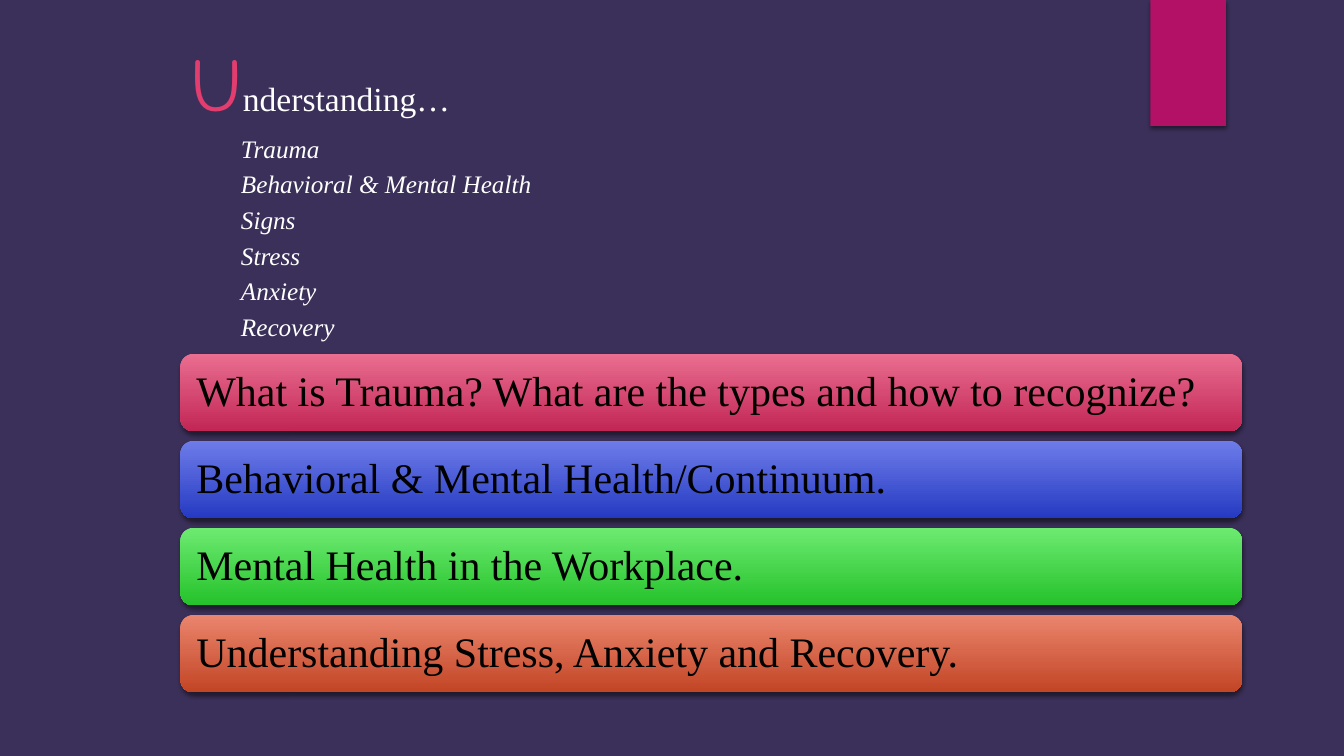
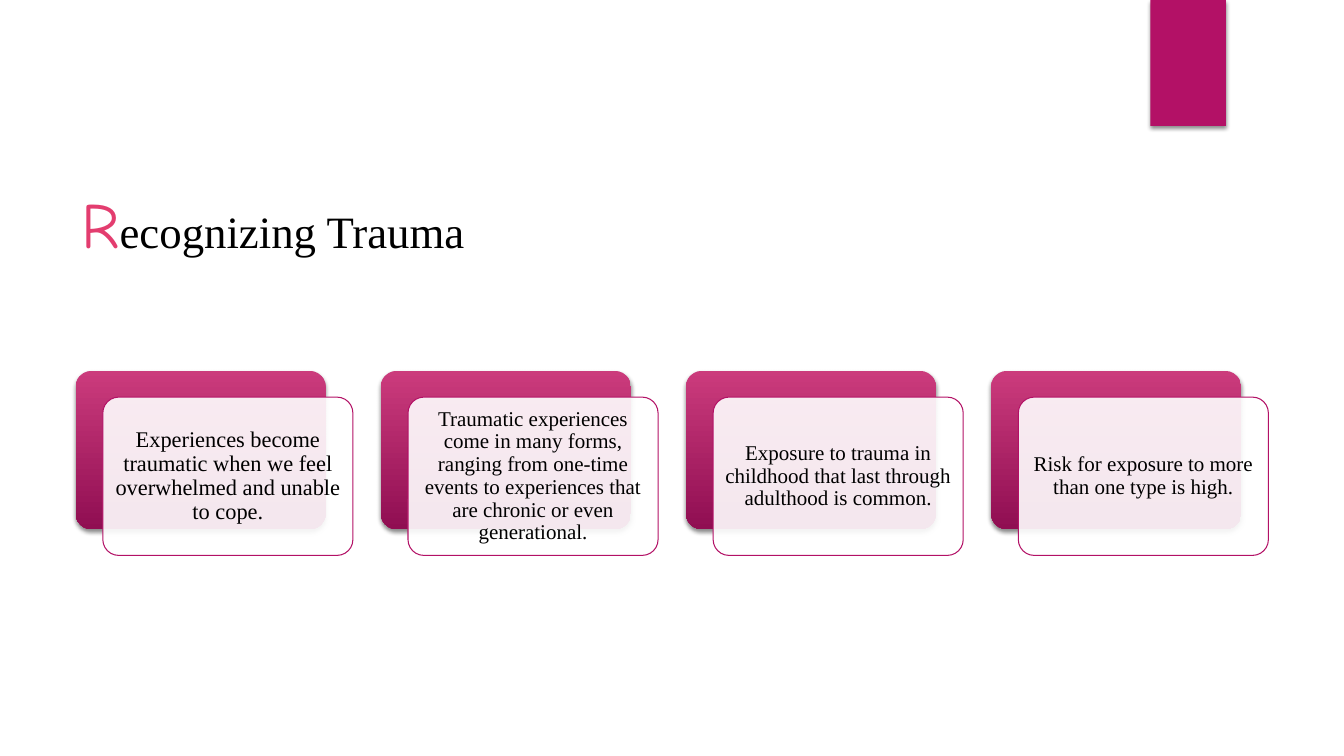
from lxml import etree
from pptx import Presentation
from pptx.dml.color import RGBColor
from pptx.enum.shapes import MSO_SHAPE as SHAPE
from pptx.enum.text import MSO_ANCHOR as ANCHOR, MSO_AUTO_SIZE as AUTOSIZE, PP_ALIGN as ALIGN
from pptx.oxml.ns import qn
from pptx.util import Inches, Pt

# Shared colours and fonts
PURPLE = RGBColor(0x3B, 0x30, 0x59)
MAGENTA = RGBColor(0xB3, 0x11, 0x66)
PINK = RGBColor(0xE3, 0x3D, 0x6F)
WHITE = RGBColor(0xFF, 0xFF, 0xFF)
BLACK = RGBColor(0x00, 0x00, 0x00)
CARD_GRADIENT = (RGBColor(0xCB, 0x3B, 0x7C), RGBColor(0x90, 0x0E, 0x52))
BAR_GRADIENTS = [
    (RGBColor(0xE9, 0x6E, 0x90), RGBColor(0xC2, 0x26, 0x55)),
    (RGBColor(0x6E, 0x7C, 0xE9), RGBColor(0x25, 0x3A, 0xC2)),
    (RGBColor(0x6D, 0xEA, 0x71), RGBColor(0x25, 0xC2, 0x2B)),
    (RGBColor(0xEA, 0x85, 0x6D), RGBColor(0xC2, 0x45, 0x25)),
]
SERIF = "Times New Roman"
INITIAL = "Comic Neue"

# Slide content
TOPICS = ["Trauma", "Behavioral & Mental Health", "Signs", "Stress", "Anxiety", "Recovery"]
BARS = [
    "What is Trauma? What are the types and how to recognize?",
    "Behavioral & Mental Health/Continuum.",
    "Mental Health in the Workplace.",
    "Understanding Stress, Anxiety and Recovery.",
]
CARDS = [
    ("Experiences become traumatic when we feel overwhelmed and unable to cope.", 16),
    ("Traumatic experiences come in many forms, ranging from one-time events to "
     "experiences that are chronic or even generational.", 15),
    ("Exposure to trauma in childhood that last through adulthood is common.", 15),
    ("Risk for exposure to more than one type is high.", 15),
]


def add_run(p, text, size, color, name=SERIF, **extra):
    r = p.add_run()
    r.text = text
    font = {"name": name, "size": Pt(size), "bold": False, **extra}
    for key, value in font.items():
        setattr(r.font, key, value)
    r.font.color.rgb = color


def format_paragraph(p, align, after=0):
    values = {"alignment": align, "line_spacing": 0.9,
              "space_before": Pt(0), "space_after": Pt(after)}
    for key, value in values.items():
        setattr(p, key, value)


def add_box(slide, shape, x, y, w, h):
    sp = slide.shapes.add_shape(shape, Inches(x), Inches(y), Inches(w), Inches(h))
    sp.shadow.inherit = False
    sp.line.fill.background()
    return sp


def add_shadow(sp):
    effects = sp._element.spPr.find(qn("a:effectLst"))
    shadow = etree.SubElement(effects, qn("a:outerShdw"), blurRad=str(Pt(3)),
                              dist=str(Pt(2)), dir="5400000", rotWithShape="0")
    color = etree.SubElement(shadow, qn("a:srgbClr"), val=str(BLACK))
    etree.SubElement(color, qn("a:alpha"), val="45000")


def fill_gradient(sp, colors):
    sp.fill.gradient()
    sp.fill.gradient_angle = 270
    for stop, color in zip(sp.fill.gradient_stops, colors):
        stop.color.rgb = color


def set_text(sp, text, size, align, inset):
    tf = sp.text_frame
    values = {"word_wrap": True, "vertical_anchor": ANCHOR.MIDDLE}
    values.update({f"margin_{side}": Inches(inset) for side in ("left", "top", "right", "bottom")})
    for key, value in values.items():
        setattr(tf, key, value)
    format_paragraph(tf.paragraphs[0], align)
    add_run(tf.paragraphs[0], text, size, BLACK)


def new_slide(prs, background):
    """Title-only slide with its background and the corner ribbon."""
    s = prs.slides.add_slide(prs.slide_layouts[5])
    s.background.fill.solid()
    s.background.fill.fore_color.rgb = background
    ribbon = add_box(s, SHAPE.RECTANGLE, 11.41, 0, 0.75, 1.25)
    ribbon.fill.solid()
    ribbon.fill.fore_color.rgb = MAGENTA
    add_shadow(ribbon)
    return s


def set_title(s, text, box, initial_size, size, color, align):
    """Title whose first letter is a large pink initial."""
    title = s.shapes.title
    title.left, title.top, title.width, title.height = map(Inches, box)
    tf = title.text_frame
    tf.auto_size = AUTOSIZE.NONE
    tf.word_wrap = True
    tf.vertical_anchor = ANCHOR.MIDDLE
    p = tf.paragraphs[0]
    format_paragraph(p, align, 6)
    add_run(p, text[0], initial_size, PINK, INITIAL)
    add_run(p, text[1:], size, color)
    return tf


def add_topics(tf, topics):
    for topic in topics:
        p = tf.add_paragraph()
        p._p.get_or_add_pPr().set("marL", str(Inches(0.5)))
        format_paragraph(p, ALIGN.LEFT, 6)
        add_run(p, topic, 18, WHITE, italic=True)


def add_bars(s, x, y, w, h):
    """Full-width bars spread evenly over the box."""
    bar_h = 0.77
    pitch = (h - bar_h) / (len(BARS) - 1)
    for i, (text, colors) in enumerate(zip(BARS, BAR_GRADIENTS)):
        bar = add_box(s, SHAPE.ROUNDED_RECTANGLE, x, y + i * pitch, w, bar_h)
        fill_gradient(bar, colors)
        add_shadow(bar)
        set_text(bar, text, 30, ALIGN.LEFT, 0.12)


def add_cards(s, x, y, w, h):
    """Cards spread evenly over the box, each with a panel shifted down and right."""
    dx, dy, card_w = 0.27, 0.26, 2.48
    card_h = h - dy
    pitch = (w - dx - card_w) / (len(CARDS) - 1)
    for i, (text, size) in enumerate(CARDS):
        left = x + i * pitch
        back = add_box(s, SHAPE.ROUNDED_RECTANGLE, left, y, card_w, card_h)
        fill_gradient(back, CARD_GRADIENT)
        add_shadow(back)

        panel = add_box(s, SHAPE.ROUNDED_RECTANGLE, left + dx, y + dy, card_w, card_h)
        panel.fill.solid()
        panel.fill.fore_color.rgb = WHITE
        color = panel._element.spPr.find(qn("a:solidFill")).find(qn("a:srgbClr"))
        etree.SubElement(color, qn("a:alpha"), val="90000")
        panel.line.color.rgb = MAGENTA
        panel.line.width = Pt(0.75)
        set_text(panel, text, size, ALIGN.CENTER, 0.06)
        for sp in (back, panel):
            sp.adjustments[0] = 0.1


def build_understanding(prs):
    s = new_slide(prs, PURPLE)
    tf = set_title(s, "Understanding…", (1.79, 0.37, 9.58, 3.11), 54, 24, WHITE, ALIGN.LEFT)
    add_topics(tf, TOPICS)
    add_bars(s, 1.79, 3.51, 10.53, 3.36)


def build_recognizing(prs):
    s = new_slide(prs, WHITE)
    set_title(s, "Recognizing Trauma", (0.5, 1.55, 4.21, 1.41), 46, 32, BLACK, ALIGN.RIGHT)
    add_cards(s, 0.75, 3.68, 11.83, 1.83)


def main():
    prs = Presentation()
    prs.slide_width, prs.slide_height = Inches(13.33), Inches(7.5)
    build_understanding(prs)
    build_recognizing(prs)
    prs.save("out.pptx")


if __name__ == "__main__":
    main()
